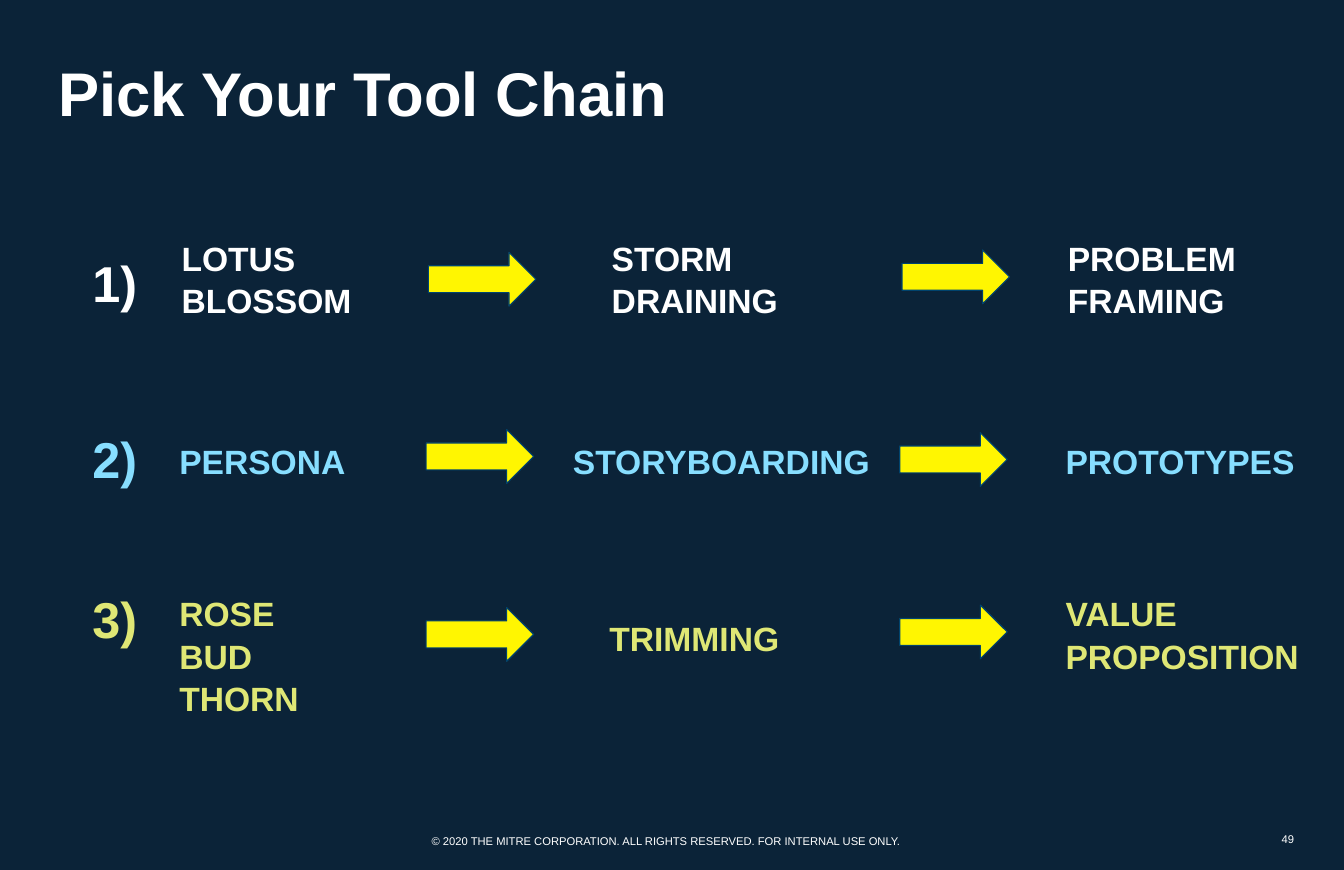
from pptx import Presentation
from pptx.dml.color import RGBColor
from pptx.enum.shapes import MSO_SHAPE as Shape
from pptx.enum.text import MSO_ANCHOR as Anchor, PP_ALIGN as Align
from pptx.util import Pt

COLORS = {
    "navy": "0B2338",
    "white": "FFFFFF",
    "sky": "87DEFF",
    "lime": "DFE775",
    "yellow": "FFF601",
    "outline": "00436D",
}
FONT = "Arial"
TOOL_SIZE, NUMBER_SIZE, FOOTER_SIZE = 30.6, 45.9, 10.2
LINE_HEIGHT = 37
NUMBER_LEFT = 74.9
ARROW_SIZE = (97.9, 49)

# Each chain: color, shift to the right, number top,
# tools as (left, top, width, lines), arrows as (left, top)
CHAINS = [
    ("white", 2.1, 221.8,
     [(154.1, 210.2, 175, ["LOTUS", "BLOSSOM"]),
      (545.8, 210.2, 171.4, ["STORM", "DRAINING"]),
      (961.2, 210.2, 172.8, ["PROBLEM", "FRAMING"])],
     [(388.1, 229.7), (819.4, 227.5)]),
    ("sky", 0, 382.3,
     [(154.1, 394.6, 171.4, ["PERSONA"]),
      (512.6, 394.6, 291.6, ["STORYBOARDING"]),
      (961.2, 394.6, 229, ["PROTOTYPES"])],
     [(388.1, 391), (819.4, 393.8)]),
    ("lime", 0, 528.5,
     [(154.1, 533.5, 128.2, ["ROSE", "BUD", "THORN"]),
      (545.8, 555.8, 175, ["TRIMMING"]),
      (961.2, 533.5, 233.3, ["VALUE", "PROPOSITION"])],
     [(388.1, 553), (819.4, 550.8)]),
]


def rgb(name):
    return RGBColor.from_string(COLORS[name])


def add_run(paragraph, text, size, color, bold):
    run = paragraph.add_run()
    run.text = text
    run.font.name = FONT
    run.font.size = Pt(size)
    run.font.bold = bold
    run.font.color.rgb = rgb(color)


def set_title(slide, text):
    title = slide.shapes.title
    title.left, title.top, title.width, title.height = (
        Pt(46.1), Pt(43.9), Pt(1131.8), Pt(79.9))
    frame = title.text_frame
    frame.vertical_anchor = Anchor.MIDDLE
    frame.paragraphs[0].alignment = Align.LEFT
    add_run(frame.paragraphs[0], text, 56.1, "white", True)


def add_label(slide, box, lines, size, color):
    """Bold lines in a box that does not wrap."""
    frame = slide.shapes.add_textbox(*map(Pt, box)).text_frame
    frame.word_wrap = False
    frame.margin_left = frame.margin_right = Pt(9.2)
    frame.margin_top = frame.margin_bottom = Pt(4.6)
    for index, line in enumerate(lines):
        paragraph = frame.add_paragraph() if index else frame.paragraphs[0]
        paragraph.alignment = Align.LEFT
        paragraph.line_spacing = 1.05
        add_run(paragraph, line, size, color, True)


def add_footer(slide, box, text, align):
    frame = slide.shapes.add_textbox(*map(Pt, box)).text_frame
    frame.word_wrap = True
    frame.vertical_anchor = Anchor.MIDDLE
    frame.margin_left = frame.margin_right = 0
    frame.paragraphs[0].alignment = align
    add_run(frame.paragraphs[0], text, FOOTER_SIZE, "white", False)


def add_arrow(slide, left, top):
    arrow = slide.shapes.add_shape(
        Shape.RIGHT_ARROW, *map(Pt, (left, top, *ARROW_SIZE)))
    arrow.shadow.inherit = False
    arrow.fill.solid()
    arrow.fill.fore_color.rgb = rgb("yellow")
    arrow.line.color.rgb = rgb("outline")
    arrow.line.width = Pt(1)


def main():
    deck = Presentation()
    deck.slide_width, deck.slide_height = Pt(1224), Pt(792)
    slide = deck.slides.add_slide(deck.slide_layouts[5])
    slide.background.fill.solid()
    slide.background.fill.fore_color.rgb = rgb("navy")

    set_title(slide, "Pick Your Tool Chain")

    # Numbered tool chains
    for number, (color, shift, number_top, tools, arrows) in enumerate(CHAINS, 1):
        add_label(slide, (NUMBER_LEFT, number_top, 59.8, 64.8),
                  [f"{number})"], NUMBER_SIZE, color)
        for left, top, width, lines in tools:
            height = LINE_HEIGHT * len(lines) + 9.2
            add_label(slide, (left + shift, top, width, height),
                      lines, TOOL_SIZE, color)
        for left, top in arrows:
            add_arrow(slide, left + shift, top)

    # Footer
    add_footer(slide, (393.1, 755.3, 437, 21.6),
               "© 2020 THE MITRE CORPORATION. ALL RIGHTS RESERVED. "
               "FOR INTERNAL USE ONLY.", Align.LEFT)
    add_footer(slide, (1098, 749.5, 80.6, 28.8), "49", Align.RIGHT)

    deck.save("out.pptx")


if __name__ == "__main__":
    main()
